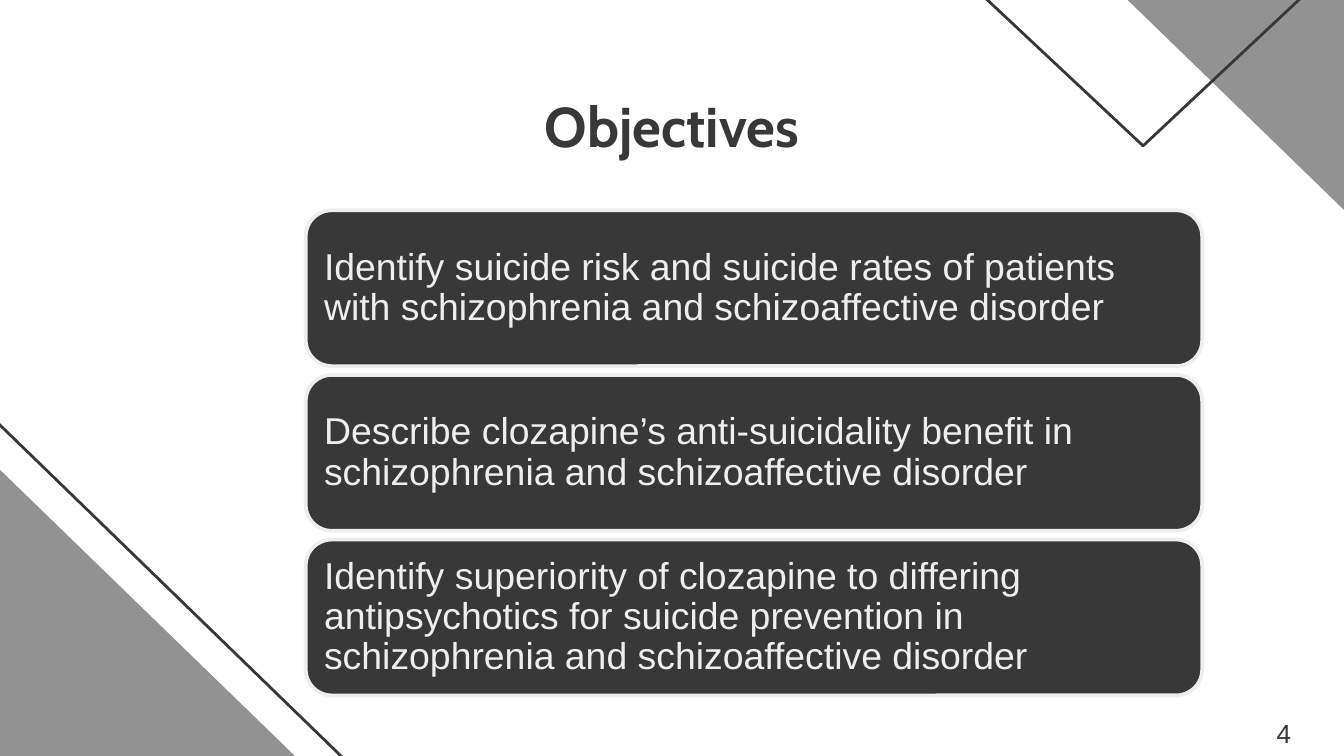
from pptx import Presentation
from pptx.dml.color import RGBColor
from pptx.enum.shapes import MSO_SHAPE
from pptx.enum.text import MSO_ANCHOR, PP_ALIGN
from pptx.util import Emu, Pt

PX = 4572  # 200 px to the inch
COLORS = {"dark": "383838", "gray": "929292", "light": "EEEEEE", "white": "FFFFFF"}


def add_box(kind, bounds, fill=None, line=None, line_width=1.5):
    """Add a preset shape, or a text box when kind is None."""
    bounds = [Emu(value * PX) for value in bounds]
    if kind is None:
        return slide.shapes.add_textbox(*bounds)
    shape = slide.shapes.add_shape(kind, *bounds)
    shape.shadow.inherit = False
    if fill:
        shape.fill.solid()
        shape.fill.fore_color.rgb = RGBColor.from_string(COLORS[fill])
    else:
        shape.fill.background()
    if line:
        shape.line.color.rgb = RGBColor.from_string(COLORS[line])
        shape.line.width = Pt(line_width)
    else:
        shape.line.fill.background()
    return shape


def write_text(shape, text, size, color, inset, font="Arial", bold=False,
               align=PP_ALIGN.LEFT, anchor=MSO_ANCHOR.TOP):
    frame = shape.text_frame
    frame.word_wrap = True
    frame.vertical_anchor = anchor
    frame.margin_left = frame.margin_right = Emu(inset[0] * PX)
    frame.margin_top = frame.margin_bottom = Emu(inset[1] * PX)
    paragraph = frame.paragraphs[0]
    paragraph.alignment = align
    run = paragraph.add_run()
    run.text = text
    run.font.name = font
    run.font.size = Pt(size)
    run.font.bold = bold
    run.font.color.rgb = RGBColor.from_string(COLORS[color])
    return paragraph


presentation = Presentation()
presentation.slide_width = Emu(2000 * PX)
presentation.slide_height = Emu(1125 * PX)
slide = presentation.slides.add_slide(presentation.slide_layouts[6])
slide.background.fill.solid()
slide.background.fill.fore_color.rgb = RGBColor.from_string(COLORS["white"])

# Corner triangles
corners = [
    (MSO_SHAPE.RIGHT_TRIANGLE, (-114, 522, 744, 722), 0, None, "dark"),
    (MSO_SHAPE.RIGHT_TRIANGLE, (-162, 542, 744, 722), 0, "gray", None),
    (MSO_SHAPE.RIGHT_TRIANGLE, (1472, -200, 744, 722), 180, "gray", None),
    (MSO_SHAPE.ISOSCELES_TRIANGLE, (1114, -333, 1174, 550), 180, None, "dark"),
]
for kind, bounds, rotation, fill, line in corners:
    add_box(kind, bounds, fill, line).rotation = rotation

# Objective cards
objectives = [
    "Identify suicide risk and suicide rates of patients with schizophrenia "
    "and schizoaffective disorder",
    "Describe clozapine’s anti-suicidality benefit in schizophrenia "
    "and schizoaffective disorder",
    "Identify superiority of clozapine to differing antipsychotics for suicide "
    "prevention in schizophrenia and schizoaffective disorder",
]
CARD_TOP, CARD_HEIGHT, CARD_STEP = 313, 232, 245
for index, objective in enumerate(objectives):
    top = CARD_TOP + index * CARD_STEP
    card = add_box(MSO_SHAPE.ROUNDED_RECTANGLE, (455, top, 1334, CARD_HEIGHT),
                   "dark", "light", 2)
    paragraph = write_text(card, objective, 20, "light", (16, 16),
                           anchor=MSO_ANCHOR.MIDDLE)
    paragraph.line_spacing = 0.9

# Title
title = add_box(None, (432, 116, 1136, 116))
write_text(title, "Objectives", 30, "dark", (20, 20), "Cabin", True, PP_ALIGN.CENTER)

# Page number
page_number = add_box(None, (1880, 1058, 78, 68))
write_text(page_number, "4", 14, "dark", (20, 10))

presentation.save("out.pptx")
